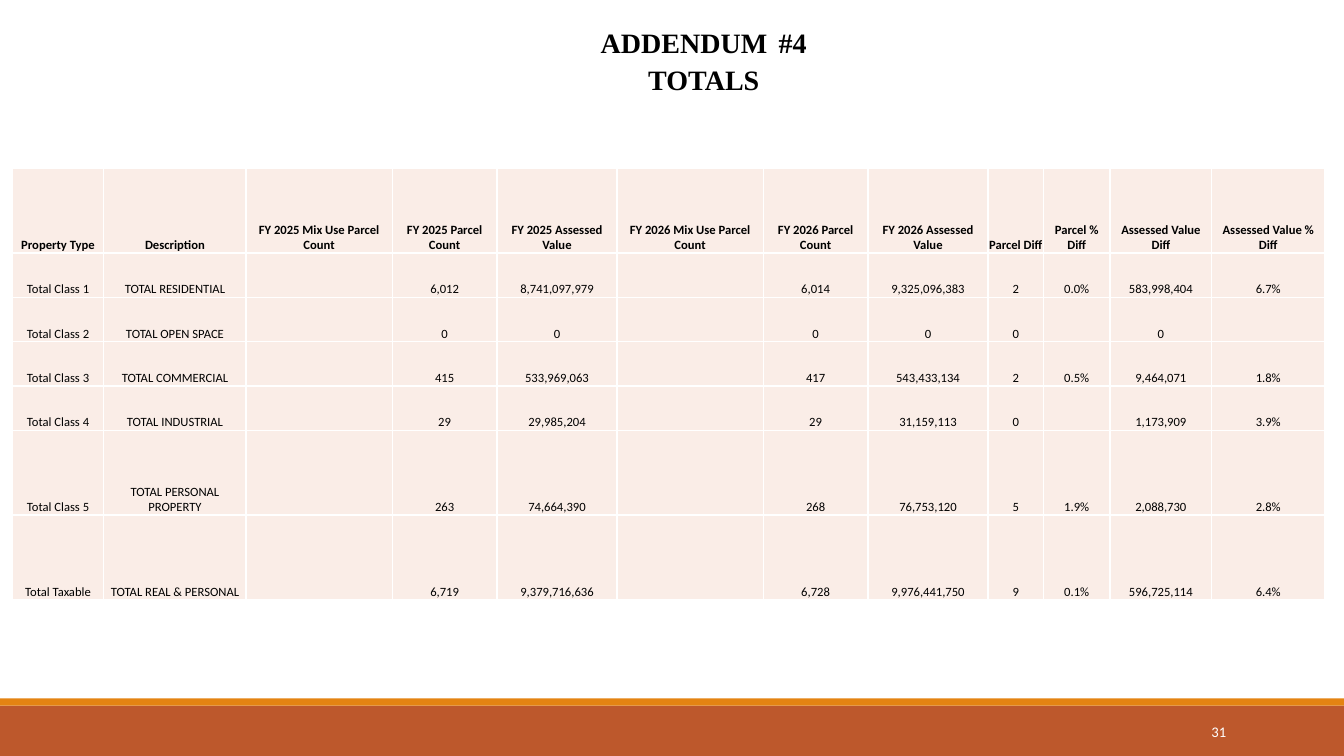
from lxml.etree import SubElement
from pptx import Presentation
from pptx.dml.color import RGBColor
from pptx.enum.shapes import MSO_SHAPE
from pptx.enum.text import MSO_ANCHOR, PP_ALIGN
from pptx.oxml.ns import qn
from pptx.util import Inches, Pt

RUST = RGBColor(0xBD, 0x58, 0x2C)
ORANGE = RGBColor(0xE4, 0x83, 0x12)
BLUSH = RGBColor(0xFA, 0xED, 0xE7)
WHITE = RGBColor(0xFF, 0xFF, 0xFF)
BLACK = RGBColor(0, 0, 0)

COLUMN_WIDTHS = [0.91, 1.41, 1.45, 1.04, 1.19, 1.45, 1.04, 1.19, 0.55, 0.66, 1.01, 1.12]
ROW_HEIGHTS = [0.84, 0.44, 0.44, 0.44, 0.44, 0.84, 0.84]
TOTALS = [
    ["Property Type", "Description", "FY 2025 Mix Use Parcel Count", "FY 2025 Parcel Count",
     "FY 2025 Assessed Value", "FY 2026 Mix Use Parcel Count", "FY 2026 Parcel Count",
     "FY 2026 Assessed Value", "Parcel Diff", "Parcel % Diff", "Assessed Value Diff",
     "Assessed Value % Diff"],
    ["Total Class 1", "TOTAL RESIDENTIAL", "", "6,012", "8,741,097,979", "", "6,014",
     "9,325,096,383", "2", "0.0%", "583,998,404", "6.7%"],
    ["Total Class 2", "TOTAL OPEN SPACE", "", "0", "0", "", "0", "0", "0", "", "0", ""],
    ["Total Class 3", "TOTAL COMMERCIAL", "", "415", "533,969,063", "", "417",
     "543,433,134", "2", "0.5%", "9,464,071", "1.8%"],
    ["Total Class 4", "TOTAL INDUSTRIAL", "", "29", "29,985,204", "", "29",
     "31,159,113", "0", "", "1,173,909", "3.9%"],
    ["Total Class 5", "TOTAL PERSONAL PROPERTY", "", "263", "74,664,390", "", "268",
     "76,753,120", "5", "1.9%", "2,088,730", "2.8%"],
    ["Total Taxable", "TOTAL REAL & PERSONAL", "", "6,719", "9,379,716,636", "", "6,728",
     "9,976,441,750", "9", "0.1%", "596,725,114", "6.4%"],
]


def add_span(para, text, color=BLACK, **font_format):
    """Append a run with the given font format."""
    span = para.add_run()
    span.text = text
    span.font.color.rgb = color
    for name, value in font_format.items():
        setattr(span.font, name, value)


def add_text_box(page, left, top, width, height, **frame_format):
    """Add a wrapping text box and return its text frame."""
    box = page.shapes.add_textbox(Inches(left), Inches(top), Inches(width), Inches(height))
    box.text_frame.word_wrap = True
    for name, value in frame_format.items():
        setattr(box.text_frame, name, value)
    return box.text_frame


def add_title(page, left, top, width, height):
    """Write the two centred title lines."""
    frame = add_text_box(page, left, top, width, height, margin_top=Inches(0.09))
    lines = [[("ADDENDUM", 20), (" ", 32), ("#4", 20)], [("TOTALS", 20)]]
    for index, line in enumerate(lines):
        para = frame.add_paragraph() if index else frame.paragraphs[0]
        para.alignment = PP_ALIGN.CENTER
        for text, size in line:
            add_span(para, text, name="Times New Roman", size=Pt(size), bold=True)


def add_borders(cell):
    """Give a cell thin white borders on all sides."""
    properties = cell._tc.get_or_add_tcPr()
    for side in ("a:lnL", "a:lnR", "a:lnT", "a:lnB"):
        line = SubElement(properties, qn(side), w=str(Pt(1)))
        fill = SubElement(line, qn("a:solidFill"))
        SubElement(fill, qn("a:srgbClr"), val=str(WHITE))


def fill_cell(cell, text, bold):
    """Format one table cell and write its text."""
    add_borders(cell)
    cell.fill.solid()
    cell.fill.fore_color.rgb = BLUSH
    cell_format = {
        "vertical_anchor": MSO_ANCHOR.BOTTOM,
        "margin_left": Inches(0.01),
        "margin_right": Inches(0.01),
        "margin_top": Inches(0.01),
        "margin_bottom": 0,
    }
    for name, value in cell_format.items():
        setattr(cell, name, value)
    para = cell.text_frame.paragraphs[0]
    para.alignment = PP_ALIGN.CENTER
    if text:
        add_span(para, text, name="Calibri", size=Pt(9), bold=bold)


def add_totals_table(page, left, top, width, height):
    """Build the table of totals by property class."""
    table = page.shapes.add_table(len(ROW_HEIGHTS), len(COLUMN_WIDTHS), Inches(left),
                                  Inches(top), Inches(width), Inches(height)).table
    table.horz_banding = False
    for column, column_width in zip(table.columns, COLUMN_WIDTHS):
        column.width = Inches(column_width)
    for row_index, (row, row_height) in enumerate(zip(table.rows, ROW_HEIGHTS)):
        row.height = Inches(row_height)
        for cell, text in zip(row.cells, TOTALS[row_index]):
            fill_cell(cell, text, bold=row_index == 0)


def add_footer(page, left, top, width, height):
    """Draw the two footer bands and the slide number."""
    stripe = 0.07
    bands = [(top + stripe, height - stripe, RUST), (top, stripe, ORANGE)]
    for band_top, band_height, color in bands:
        band = page.shapes.add_shape(MSO_SHAPE.RECTANGLE, Inches(left), Inches(band_top),
                                     Inches(width), Inches(band_height))
        band.shadow.inherit = False
        band.fill.solid()
        band.fill.fore_color.rgb = color
        band.line.fill.background()
    frame = add_text_box(page, left + 10.83, top + 0.13, 1.43, 0.4,
                         vertical_anchor=MSO_ANCHOR.MIDDLE)
    para = frame.paragraphs[0]
    para.alignment = PP_ALIGN.RIGHT
    add_span(para, "31", WHITE, name="Calibri", size=Pt(10.5))


def main():
    """Build and save the totals slide."""
    deck = Presentation()
    deck.slide_width, deck.slide_height = Inches(13.33), Inches(7.5)
    page = deck.slides.add_slide(deck.slide_layouts[6])
    add_footer(page, 0, 6.93, 13.33, 0.57)
    add_title(page, 5.75, 0, 2.46, 0.98)
    add_totals_table(page, 0.12, 1.67, sum(COLUMN_WIDTHS), sum(ROW_HEIGHTS))
    deck.save("out.pptx")


if __name__ == "__main__":
    main()
